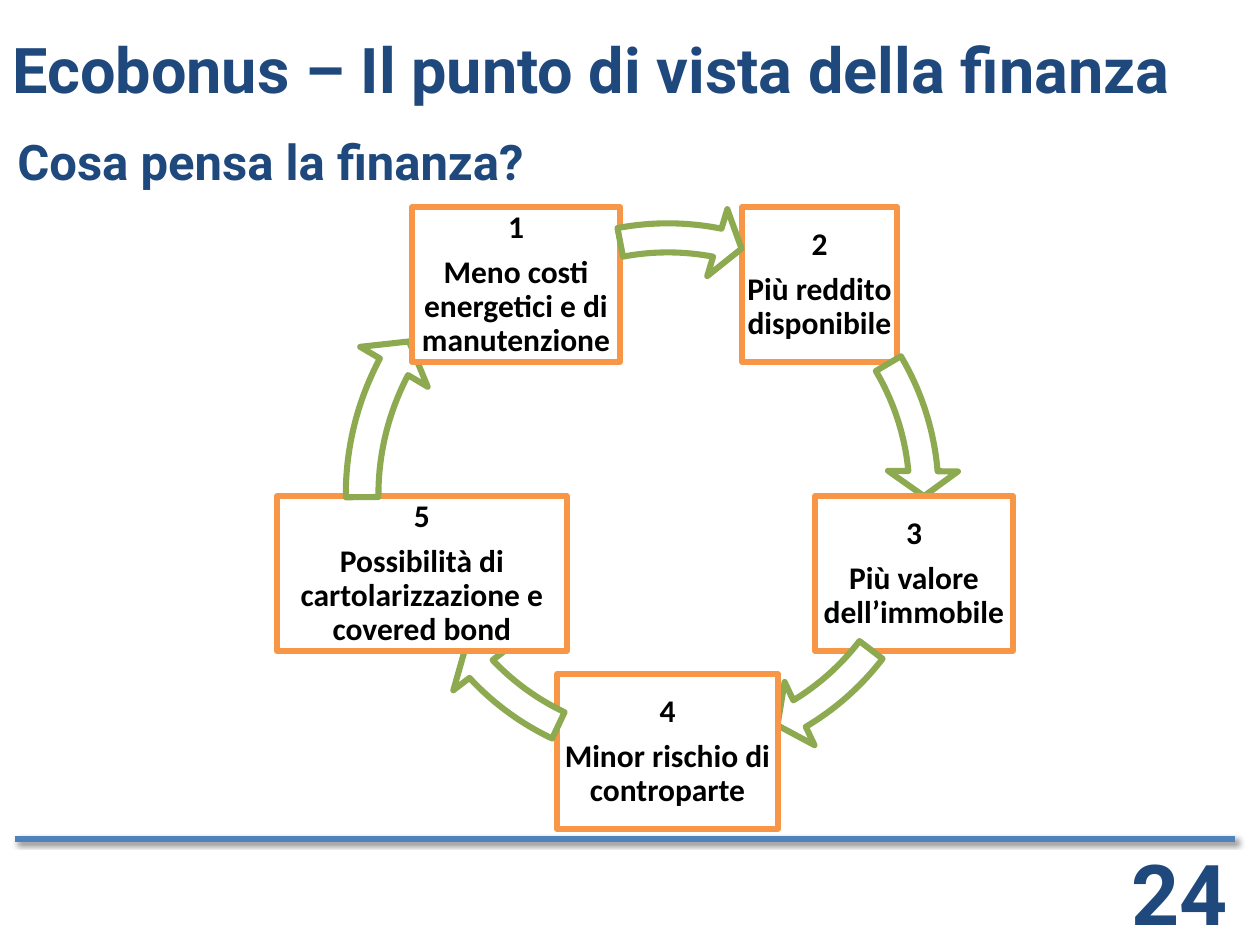
from dataclasses import dataclass

from lxml import etree
from pptx import Presentation
from pptx.dml.color import RGBColor
from pptx.enum.shapes import MSO_CONNECTOR, MSO_SHAPE
from pptx.enum.text import MSO_ANCHOR, PP_ALIGN
from pptx.oxml.ns import qn
from pptx.util import Emu, Pt

LINE = MSO_CONNECTOR.STRAIGHT
RECT = MSO_SHAPE.RECTANGLE
ARC = MSO_SHAPE.CIRCULAR_ARROW
MIDDLE = MSO_ANCHOR.MIDDLE
BOTTOM = MSO_ANCHOR.BOTTOM
LEFT = PP_ALIGN.LEFT
CENTER = PP_ALIGN.CENTER

SCALE = 914400 / 126
WHITE, BLACK = "FFFFFF", "000000"
NAVY, BLUE = "1F497D", "4F81BD"
ORANGE, GREEN = "F79646", "8DAA51"
RING = (377, 203, 582, 582)
WIDE = (323, 168, 690, 653)
BOX_H = 155
PAD = 4


@dataclass
class Label:
    text: str
    area: tuple
    size: int
    anchor: MSO_ANCHOR = MIDDLE
    align: PP_ALIGN = LEFT


@dataclass
class Step:
    """A numbered box and the arrow that leaves it; angles are adjust values."""
    num: int
    text: str
    left: int
    top: int
    width: int
    head: float
    tail: float
    ring: tuple = RING


LABELS = [
    Label("Ecobonus – Il punto di vista della finanza", (0, -1, 1260, 139), 36),
    Label("Cosa pensa la finanza?", (5, 91, 948, 139), 28),
    Label("24", (1099, 839, 161, 110), 48, BOTTOM, CENTER),
]

STEPS = [
    Step(2, "Più reddito disponibile", 742, 207, 155, 212.94, 197.65),
    Step(3, "Più valore dell’immobile", 815, 496, 198, 35.44, 22.52),
    Step(4, "Minor rischio di controparte", 557, 674, 221, 82.12, 69.2),
    Step(5, "Possibilità di cartolarizzazione e covered bond",
         277, 496, 290, 122.99, 107.7, WIDE),
    Step(1, "Meno costi energetici e di manutenzione",
         412, 207, 208, 168.67, 155.56),
]


def px(num: int) -> Emu:
    return Emu(round(num * SCALE))


def color(code: str) -> RGBColor:
    return RGBColor.from_string(code)


def add_run(para, text: str, font: str, size: int, code: str) -> None:
    run = para.add_run()
    run.text = text
    run.font.name = font
    run.font.size = Pt(size)
    run.font.bold = True
    run.font.color.rgb = color(code)


def add_label(slide, label: Label) -> None:
    frame = slide.shapes.add_textbox(*map(px, label.area)).text_frame
    frame.word_wrap = True
    frame.vertical_anchor = label.anchor
    para = frame.paragraphs[0]
    para.alignment = label.align
    add_run(para, label.text, "Roboto", label.size, NAVY)


def add_rule(slide) -> None:
    """Draw the footer line with its soft shadow."""
    rule = slide.shapes.add_connector(LINE, px(15), px(839), px(1235), px(839))
    rule.line.color.rgb = color(BLUE)
    rule.line.width = Pt(3.5)
    effect = etree.SubElement(rule._element.spPr, qn("a:effectLst"))
    shadow = etree.SubElement(
        effect, qn("a:outerShdw"), blurRad=str(Pt(3)), dist=str(Pt(2)),
        dir="2700000", algn="tl", rotWithShape="0")
    tone = etree.SubElement(shadow, qn("a:srgbClr"), val=BLACK)
    etree.SubElement(tone, qn("a:alpha"), val="60000")


def add_shape(slide, kind: MSO_SHAPE, area: tuple, code: str, width: float):
    shape = slide.shapes.add_shape(kind, *map(px, area))
    shape.shadow.inherit = False
    shape.fill.solid()
    shape.fill.fore_color.rgb = color(WHITE)
    shape.line.color.rgb = color(code)
    shape.line.width = Pt(width)
    return shape


def add_step(slide, step: Step) -> None:
    area = (step.left, step.top, step.width, BOX_H)
    frame = add_shape(slide, RECT, area, ORANGE, 3).text_frame
    frame.word_wrap = True
    frame.vertical_anchor = MIDDLE
    frame.margin_left = frame.margin_right = px(PAD)
    frame.margin_top = frame.margin_bottom = px(PAD)
    for para, text in ((frame.paragraphs[0], str(step.num)),
                       (frame.add_paragraph(), step.text)):
        para.alignment = CENTER
        para.line_spacing = 0.9
        para.space_after = Pt(6.3)
        add_run(para, text, "Calibri", 18, BLACK)

    arrow = add_shape(slide, ARC, step.ring, GREEN, 3.5)
    values = (0.05, 3.36, step.head, step.tail, 0.06)
    for pos, value in enumerate(values):
        arrow.adjustments[pos] = value


def main() -> None:
    deck = Presentation()
    deck.slide_width, deck.slide_height = px(1260), px(945)
    slide = deck.slides.add_slide(deck.slide_layouts[6])
    add_rule(slide)
    for label in LABELS:
        add_label(slide, label)
    for step in STEPS:
        add_step(slide, step)
    deck.save("out.pptx")


if __name__ == "__main__":
    main()
